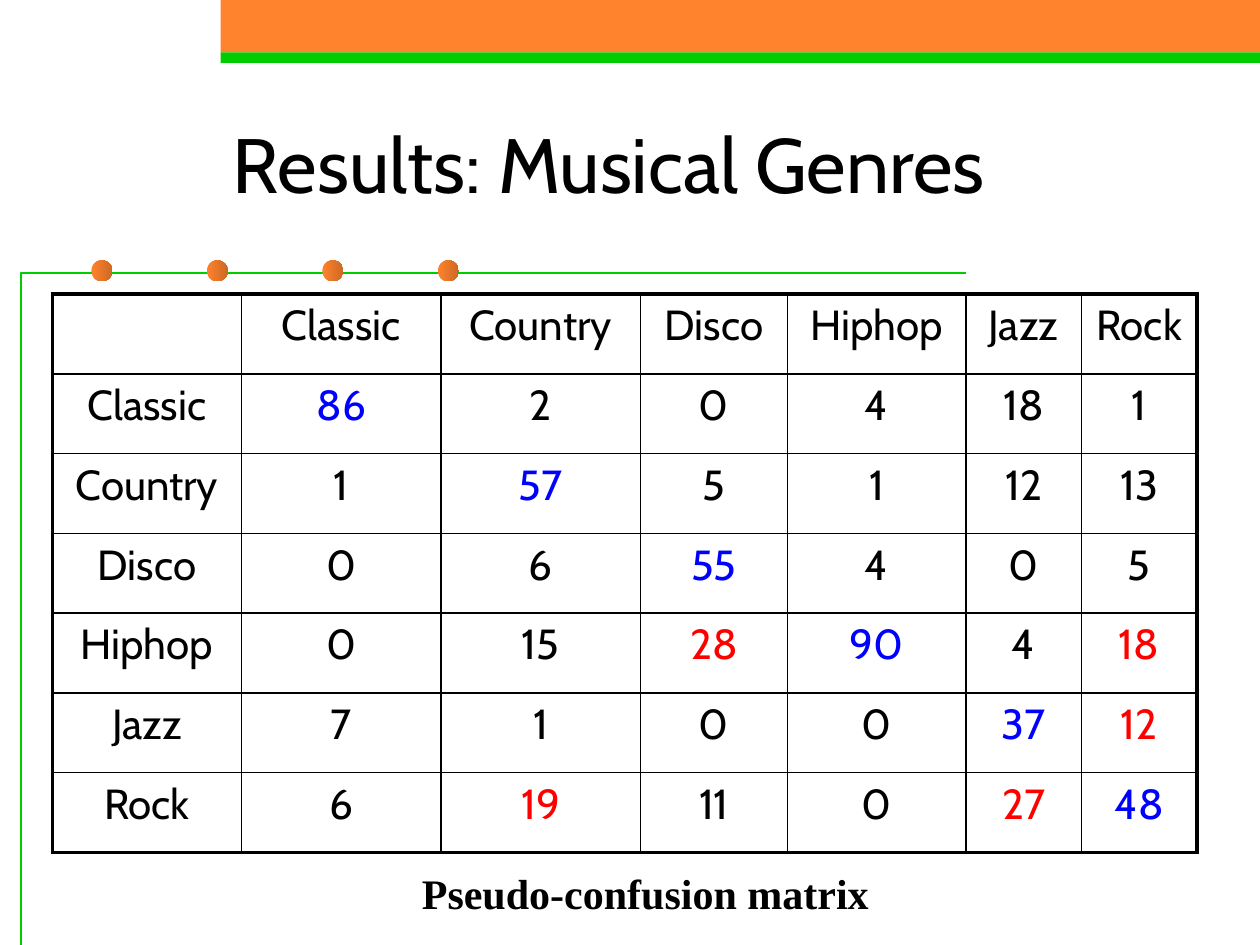
"""Build the musical genres pseudo-confusion matrix slide."""
from lxml import etree
from pptx import Presentation
from pptx.dml.color import RGBColor
from pptx.enum.shapes import MSO_SHAPE
from pptx.enum.text import MSO_ANCHOR, PP_ALIGN
from pptx.oxml.ns import qn
from pptx.util import Pt

PX = 7620
RECTANGLE, OVAL = MSO_SHAPE.RECTANGLE, MSO_SHAPE.OVAL
MIDDLE = MSO_ANCHOR.MIDDLE
CENTER, LEFT = PP_ALIGN.CENTER, PP_ALIGN.LEFT
COLORS = {
    "orange": "FF822D", "brown": "CD6924", "green": "00CC00",
    "black": "000000", "blue": "0000FF", "red": "FF0000",
}


def add_text(frame, text, size, font="Cabin", color="black", align=CENTER, bold=False):
    para = frame.paragraphs[0]
    para.alignment = align
    span = para.add_run()
    span.text = text
    span.font.size = Pt(size)
    span.font.name = font
    span.font.bold = bold
    span.font.color.rgb = RGBColor.from_string(COLORS[color])


def set_border(cell, side, width):
    line = etree.SubElement(cell._tc.get_or_add_tcPr(), qn(f"a:ln{side}"), w=str(Pt(width)))
    fill = etree.SubElement(line, qn("a:solidFill"))
    etree.SubElement(fill, qn("a:srgbClr"), val=COLORS["black"])


deck = Presentation()
deck.slide_width, deck.slide_height = 1200 * PX, 900 * PX
page = deck.slides.add_slide(deck.slide_layouts[6])

for top, height, color in [(0, 50, "orange"), (50, 10, "green")]:
    band = page.shapes.add_shape(RECTANGLE, 210 * PX, top * PX, 990 * PX, height * PX)
    band.shadow.inherit = False
    band.fill.solid()
    band.fill.fore_color.rgb = RGBColor.from_string(COLORS[color])
    band.line.fill.background()

builder = page.shapes.build_freeform(20, 900, scale=PX)
builder.add_line_segments([(20, 260), (920, 260)], close=False)
corner = builder.convert_to_shape()
corner.shadow.inherit = False
corner.fill.background()
corner.line.color.rgb = RGBColor.from_string(COLORS["green"])
corner.line.width = Pt(0.75)

for index in range(4):
    dot = page.shapes.add_shape(OVAL, (87 + 110 * index) * PX, 248 * PX, 20 * PX, 20 * PX)
    dot.shadow.inherit = False
    dot.fill.gradient()
    dot.fill.gradient_angle = 0
    for stop, color in zip(dot.fill.gradient_stops, ["orange", "brown"]):
        stop.color.rgb = RGBColor.from_string(COLORS[color])
    dot.line.fill.background()

title = page.shapes.add_textbox(70 * PX, 80 * PX, 1020 * PX, 150 * PX)
title.text_frame.word_wrap = True
title.text_frame.vertical_anchor = MIDDLE
add_text(title.text_frame, "Results: Musical Genres", 44)

genres = ["Classic", "Country", "Disco", "Hiphop", "Jazz", "Rock"]
counts = [
    [86, 2, 0, 4, 18, 1],
    [1, 57, 5, 1, 12, 13],
    [0, 6, 55, 4, 0, 5],
    [0, 15, 28, 90, 4, 18],
    [7, 1, 0, 0, 37, 12],
    [6, 19, 11, 0, 27, 48],
]
confusions = {("Hiphop", "Disco"), ("Hiphop", "Rock"), ("Jazz", "Rock"),
              ("Rock", "Country"), ("Rock", "Jazz")}
rows = [[""] + genres] + [[genre] + values for genre, values in zip(genres, counts)]
widths = [180, 190, 190, 140, 170, 110, 110]
row_height = 76
last = len(genres)

matrix = page.shapes.add_table(
    len(rows), len(widths), 50 * PX, 280 * PX, sum(widths) * PX, row_height * len(rows) * PX
).table
matrix.first_row = matrix.horz_banding = False
for column, width in zip(matrix.columns, widths):
    column.width = width * PX
for row_index, values in enumerate(rows):
    matrix.rows[row_index].height = row_height * PX
    for column_index, value in enumerate(values):
        cell = matrix.cell(row_index, column_index)
        edges = {"L": column_index == 0, "R": column_index == last,
                 "T": row_index == 0, "B": row_index == last}
        for side, outer in edges.items():
            set_border(cell, side, 2.25 if outer else 1)
        cell.fill.background()
        color = "black"
        if row_index and row_index == column_index:
            color = "blue"
        elif (values[0], rows[0][column_index]) in confusions:
            color = "red"
        if value != "":
            add_text(cell.text_frame, str(value), 24, color=color)

caption = page.shapes.add_textbox(390 * PX, 820 * PX, 450 * PX, 60 * PX)
caption.text_frame.word_wrap = True
add_text(caption.text_frame, "Pseudo-confusion matrix", 24, "Times New Roman", align=LEFT, bold=True)

deck.save("out.pptx")
